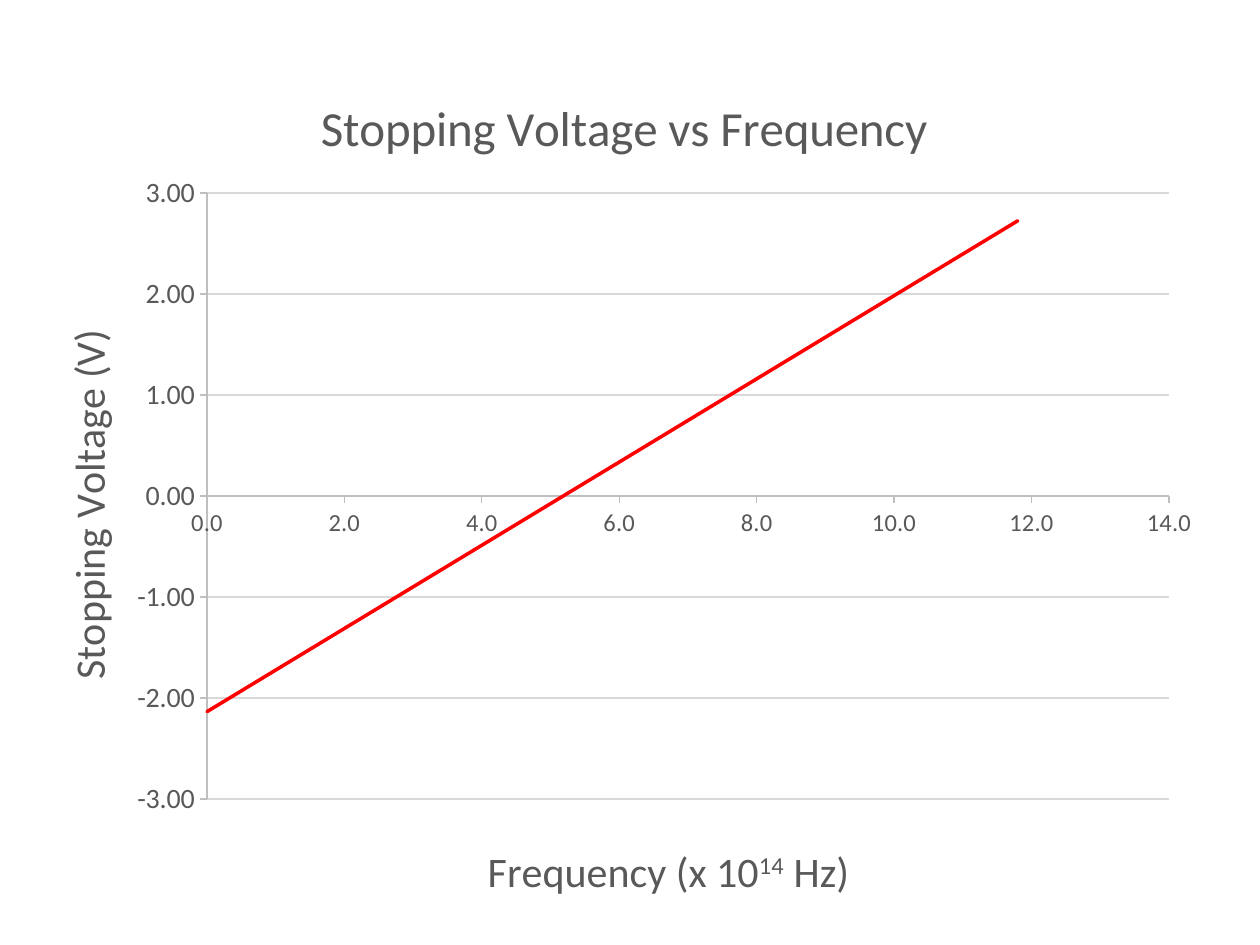
from dataclasses import dataclass

import lxml.etree
import pptx
import pptx.chart.data
import pptx.dml.color
import pptx.enum.chart
import pptx.oxml
import pptx.oxml.ns
import pptx.util

EMU_PER_PX = 914400 / 126
FONT = "Calibri"
COLORS = {"text": "595959", "axis": "BFBFBF", "grid": "D9D9D9", "trend": "FF0000", "marker": "FFFFFF"}
CHART_LEFT, CHART_TOP, CHART_WIDTH, CHART_HEIGHT = 15, 45, 1201, 873
POINTS = [(5.5, 0.1), (6.9, 0.7), (8.2, 1.3), (11.8, 2.7)]


@dataclass
class TextRun:
    text: str
    superscript: bool = False


@dataclass
class Title:
    runs: list[TextRun]
    size: int
    left: int
    top: int


@dataclass
class AxisStyle:
    title: Title
    minimum: float
    maximum: float
    step: float
    number_format: str
    size: int
    gridlines: bool


CHART_TITLE = Title([TextRun("Stopping Voltage vs Frequency")], 28, 312, 86)
FREQUENCY = AxisStyle(
    Title([TextRun("Frequency (x 10"), TextRun("14", True), TextRun(" Hz)")], 24, 484, 842),
    0, 14, 2, "#,##0.0", 14, False,
)
VOLTAGE = AxisStyle(
    Title([TextRun("Stopping Voltage (V)")], 24, 53, 322),
    -3, 3, 1, "#,##0.00", 16, True,
)


def px(length: int) -> int:
    return round(length * EMU_PER_PX)


def color(name: str) -> pptx.dml.color.RGBColor:
    return pptx.dml.color.RGBColor.from_string(COLORS[name])


def style_font(font, size: int) -> None:
    font.name = FONT
    font.size = pptx.util.Pt(size)
    font.bold = False
    font.color.rgb = color("text")


def style_line(line, name: str) -> None:
    line.color.rgb = color(name)
    line.width = pptx.util.Pt(0.75)


def place(parent, position: int, left: int, top: int, width: int = 0, height: int = 0) -> None:
    for old_layout in parent.findall(pptx.oxml.ns.qn("c:layout")):
        parent.remove(old_layout)
    layout = lxml.etree.Element(pptx.oxml.ns.qn("c:layout"))
    manual = lxml.etree.SubElement(layout, pptx.oxml.ns.qn("c:manualLayout"))
    settings = [("xMode", "edge"), ("yMode", "edge")]
    if width:
        settings.insert(0, ("layoutTarget", "inner"))
    settings += [
        ("x", f"{(left - CHART_LEFT) / CHART_WIDTH:.4f}"),
        ("y", f"{(top - CHART_TOP) / CHART_HEIGHT:.4f}"),
    ]
    if width:
        settings += [("w", f"{width / CHART_WIDTH:.4f}"), ("h", f"{height / CHART_HEIGHT:.4f}")]
    for tag, value in settings:
        lxml.etree.SubElement(manual, pptx.oxml.ns.qn(f"c:{tag}"), val=value)
    parent.insert(position, layout)


def write_title(owner, title: Title) -> None:
    title_object = getattr(owner, "chart_title", None) or owner.axis_title
    paragraph = title_object.text_frame.paragraphs[0]
    for text_run in title.runs:
        run = paragraph.add_run()
        run.text = text_run.text
        style_font(run.font, title.size)
        if text_run.superscript:
            run._r.get_or_add_rPr().set("baseline", "30000")
    place(title_object._element, 1, title.left, title.top)


def style_axis(axis, style: AxisStyle) -> None:
    axis.minimum_scale, axis.maximum_scale = style.minimum, style.maximum
    axis.major_unit = style.step
    axis.major_tick_mark = pptx.enum.chart.XL_TICK_MARK.OUTSIDE
    axis.minor_tick_mark = pptx.enum.chart.XL_TICK_MARK.NONE
    axis.tick_labels.number_format = style.number_format
    axis.tick_labels.number_format_is_linked = False
    style_font(axis.tick_labels.font, style.size)
    style_line(axis.format.line, "axis")
    axis.has_major_gridlines = style.gridlines
    if style.gridlines:
        style_line(axis.major_gridlines.format.line, "grid")
    write_title(axis, style.title)


def add_trendline(series, backward: float) -> None:
    trendline = pptx.oxml.parse_xml(
        f'<c:trendline {pptx.oxml.ns.nsdecls("c", "a")}>'
        f'<c:spPr><a:ln w="{pptx.util.Pt(2)}" cap="rnd"><a:solidFill>'
        f'<a:srgbClr val="{COLORS["trend"]}"/></a:solidFill></a:ln></c:spPr>'
        f'<c:trendlineType val="linear"/><c:backward val="{backward}"/>'
        '<c:dispRSqr val="0"/><c:dispEq val="0"/></c:trendline>'
    )
    series._element.find(pptx.oxml.ns.qn("c:xVal")).addprevious(trendline)


def style_series(series) -> None:
    series.smooth = False
    series.format.line.fill.background()
    series.marker.style = pptx.enum.chart.XL_MARKER_STYLE.CIRCLE
    series.marker.size = 5
    series.marker.format.fill.solid()
    series.marker.format.fill.fore_color.rgb = color("marker")
    series.marker.format.line.color.rgb = color("marker")
    add_trendline(series, POINTS[0][0])


def add_voltage_chart(slide) -> None:
    data = pptx.chart.data.XyChartData()
    data_series = data.add_series("Series 1")
    for frequency, voltage in POINTS:
        data_series.add_data_point(frequency, voltage)
    chart = slide.shapes.add_chart(
        pptx.enum.chart.XL_CHART_TYPE.XY_SCATTER,
        px(CHART_LEFT), px(CHART_TOP), px(CHART_WIDTH), px(CHART_HEIGHT), data,
    ).chart
    chart.has_legend = False
    chart.font.name = FONT
    chart.font.size = pptx.util.Pt(10)
    chart.plots[0].vary_by_categories = False
    style_series(chart.plots[0].series[0])
    write_title(chart, CHART_TITLE)
    style_axis(chart.category_axis, FREQUENCY)
    style_axis(chart.value_axis, VOLTAGE)
    place(chart._chartSpace.chart.plotArea, 0, 207, 193, 962, 606)


def main() -> None:
    presentation = pptx.Presentation()
    presentation.slide_width = px(1260)
    presentation.slide_height = px(945)
    slide = presentation.slides.add_slide(presentation.slide_layouts[6])
    add_voltage_chart(slide)
    presentation.save("out.pptx")


if __name__ == "__main__":
    main()
